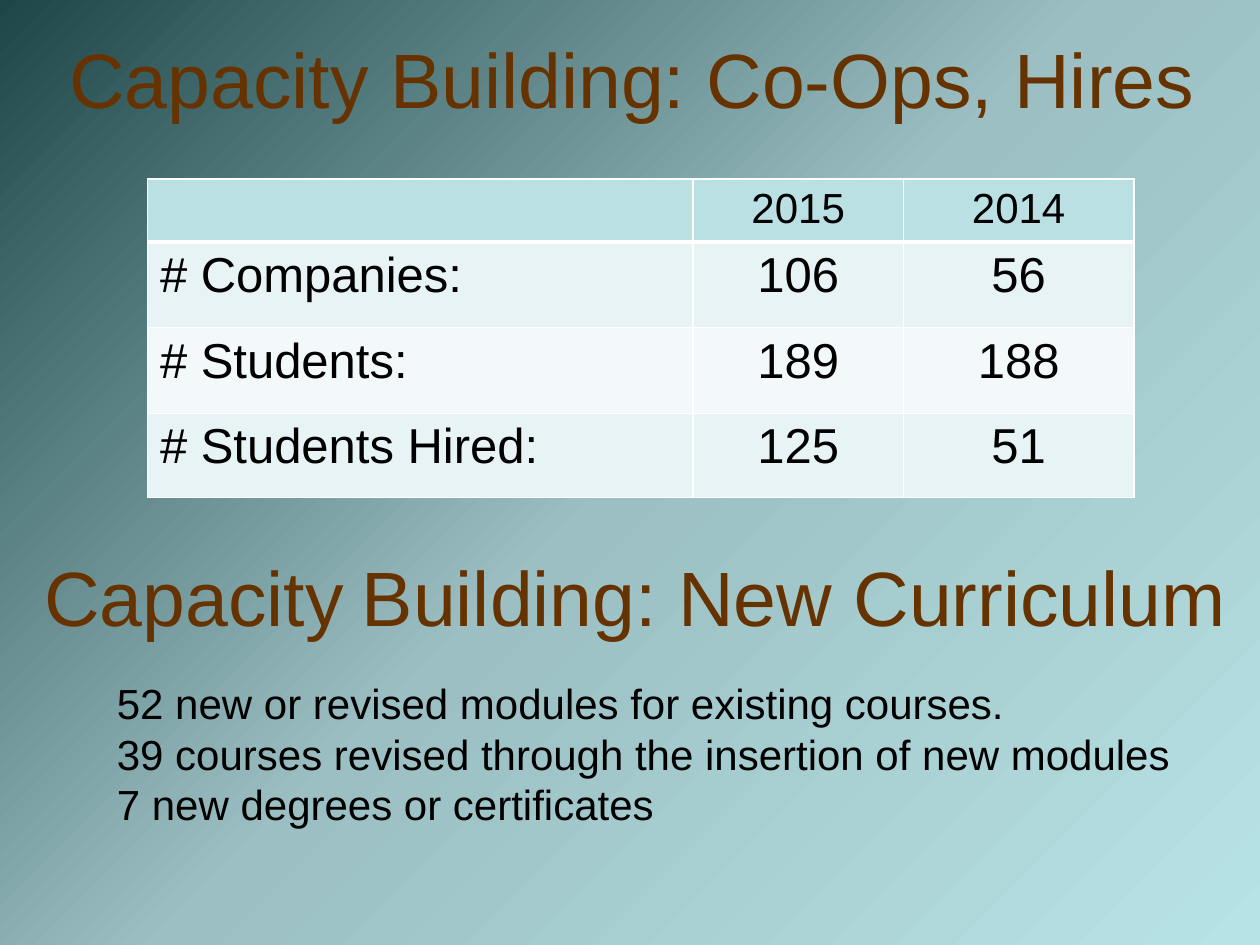
from copy import deepcopy

from lxml.etree import SubElement
from pptx import Presentation
from pptx.dml.color import RGBColor
from pptx.enum.text import MSO_ANCHOR as Anchor, PP_ALIGN as Align
from pptx.oxml.ns import qn
from pptx.util import Inches, Pt

BROWN, BLACK, WHITE = "663300", "000000", "FFFFFF"
HEADER, BAND, PLAIN = "BBE0E3", "E7F3F4", "F3F9FA"
ROWS = [
    ["", "2015", "2014"],
    ["# Companies:", "106", "56"],
    ["# Students:", "189", "188"],
    ["# Students Hired:", "125", "51"],
]
CURRICULUM = [
    "52 new or revised modules for existing courses.",
    "39 courses revised through the insertion of new modules",
    "7 new degrees or certificates",
]


def rgb(color):
    """Turn a hex string into a colour."""
    return RGBColor.from_string(color)


def add_text(p, text, size=24, color=BLACK, align=Align.LEFT, font="Arial"):
    """Add a formatted run to a paragraph."""
    p.alignment = align
    r = p.add_run()
    r.text = text
    r.font.size, r.font.name = Pt(size), font
    r.font.color.rgb = rgb(color)


def add_box(slide, left, top, width, height):
    """Add a wrapping text box and return its text frame."""
    sp = slide.shapes.add_textbox(*map(Inches, (left, top, width, height)))
    sp.text_frame.word_wrap = True
    return sp.text_frame


def add_heading(slide, box, pieces):
    """Add a centred brown heading from (text, size) pieces."""
    tf = add_box(slide, *box)
    for text, size in pieces:
        add_text(tf.paragraphs[0], text, size=size, color=BROWN, align=Align.CENTER)
    return tf


def set_background(slide, stops, angle):
    """Fill the background with a three-stop linear gradient."""
    fill = slide.background.fill
    fill.gradient()
    fill.gradient_angle = angle
    first = slide.element.xpath(".//a:gs")[0]
    first.addnext(deepcopy(first))
    for stop, (position, color) in zip(fill.gradient_stops, stops):
        stop.position = position
        stop.color.rgb = rgb(color)


def set_borders(cell, bottom):
    """Draw white cell borders with a given bottom width."""
    tc_pr = cell._tc.get_or_add_tcPr()
    widths = {"lnL": 1, "lnR": 1, "lnT": 1, "lnB": bottom}
    for i, (tag, width) in enumerate(widths.items()):
        ln = SubElement(tc_pr, qn(f"a:{tag}"), w=str(Pt(width)))
        SubElement(SubElement(ln, qn("a:solidFill")), qn("a:srgbClr"), val=WHITE)
        tc_pr.insert(i, ln)


def add_hires_table(slide, rows, widths, heights):
    """Add the table of companies, students and hires."""
    table = slide.shapes.add_table(
        len(rows), len(widths), Inches(1.17), Inches(1.42),
        Inches(sum(widths)), Inches(sum(heights))).table
    for column, width in zip(table.columns, widths):
        column.width = Inches(width)
    for i, (values, height) in enumerate(zip(rows, heights)):
        table.rows[i].height = Inches(height)
        for j, value in enumerate(values):
            cell = table.cell(i, j)
            cell.fill.solid()
            cell.fill.fore_color.rgb = rgb(HEADER if i == 0 else BAND if i % 2 else PLAIN)
            set_borders(cell, bottom=1 if i else 3)
            if value:
                add_text(cell.text_frame.paragraphs[0], value, size=28 if i else 24,
                         align=Align.CENTER if j else Align.LEFT)


def add_lines(slide, box, lines):
    """Add a text box with one paragraph per line."""
    tf = add_box(slide, *box)
    for i, line in enumerate(lines):
        add_text(tf.add_paragraph() if i else tf.paragraphs[0], line)


def main():
    """Build and save the slide."""
    prs = Presentation()
    prs.slide_width, prs.slide_height = Inches(10), Inches(7.5)
    slide = prs.slides.add_slide(prs.slide_layouts[6])
    set_background(slide, [(0, "1E4649"), (0.5, "9BBFC2"), (1, "B8E3E6")], angle=315)
    title = add_heading(slide, (0.25, 0.08, 9.58, 1.08),
                        [("Capacity Building: Co-Ops, Hires", 44)])
    title.vertical_anchor = Anchor.MIDDLE
    title.margin_left = title.margin_top = title.margin_bottom = Inches(0.06)
    add_hires_table(slide, ROWS, [4.33, 1.67, 1.83], [0.42, 0.68, 0.68, 0.67])
    add_heading(slide, (0.17, 4.31, 9.75, 0.84),
                [("Capacity", 44), (" ", 36), ("Building: New Curriculum", 44)])
    add_lines(slide, (0.83, 5.33, 8.83, 1.31), CURRICULUM)
    prs.save("out.pptx")


if __name__ == "__main__":
    main()
